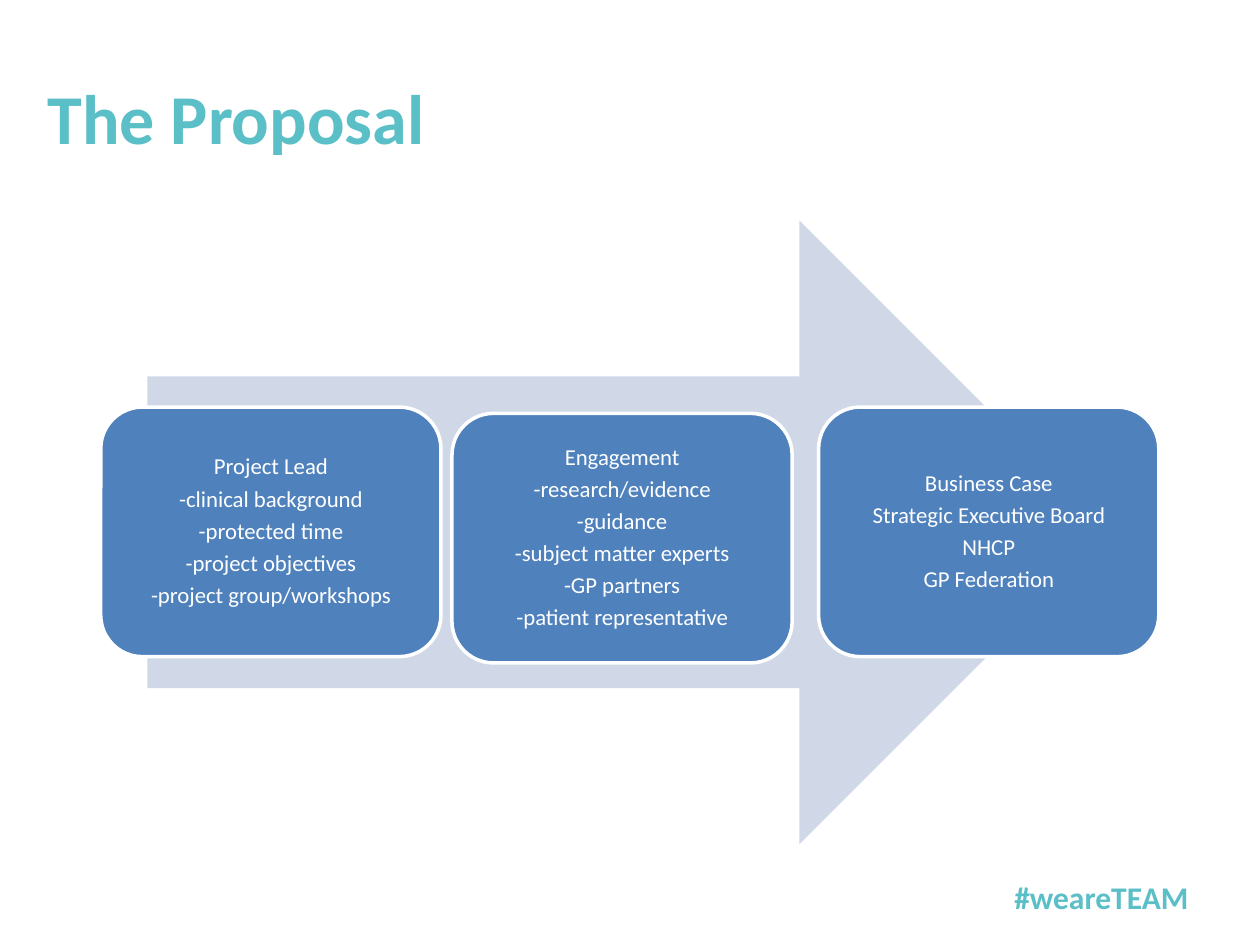
import pptx
import pptx.util
import pptx.dml.color
import pptx.enum.shapes
import pptx.enum.text

Pt = pptx.util.Pt
SHAPE = pptx.enum.shapes.MSO_SHAPE
ALIGN = pptx.enum.text.PP_ALIGN
MIDDLE = pptx.enum.text.MSO_ANCHOR.MIDDLE

COLORS = {"teal": "5BBFC7", "arrow": "D0D8E8", "card": "4F81BD", "white": "FFFFFF"}
FONT = "Calibri"
CARD_W, CARD_H = 194.4, 142.6

# Left, top and lines of each card
CARDS = [
    (57.6, 232.6, ["Project Lead", "-clinical background", "-protected time",
                   "-project objectives", "-project group/workshops"]),
    (258.3, 236.2, ["Engagement", "-research/evidence", "-guidance",
                    "-subject matter experts", "-GP partners",
                    "-patient representative"]),
    (467.8, 232.6, ["Business Case", "Strategic Executive Board", "NHCP",
                    "GP Federation"]),
]


def rgb(name):
    return pptx.dml.color.RGBColor.from_string(COLORS[name])


def set_font(p, size, color, bold=False):
    for r in p.runs:
        r.font.name = FONT
        r.font.size = Pt(size)
        r.font.bold = bold
        r.font.color.rgb = rgb(color)


def add_heading(s, text, left, top, width, height, size, align=ALIGN.LEFT):
    sp = s.shapes.add_textbox(Pt(left), Pt(top), Pt(width), Pt(height))
    tf = sp.text_frame
    tf.word_wrap = True
    tf.vertical_anchor = MIDDLE
    tf.text = text
    p = tf.paragraphs[0]
    p.alignment = align
    set_font(p, size, "teal", bold=True)


def add_filled_shape(s, kind, left, top, width, height, color):
    sp = s.shapes.add_shape(kind, Pt(left), Pt(top), Pt(width), Pt(height))
    sp.shadow.inherit = False
    sp.fill.solid()
    sp.fill.fore_color.rgb = rgb(color)
    sp.line.fill.background()
    return sp


def add_card(s, left, top, lines):
    sp = add_filled_shape(s, SHAPE.ROUNDED_RECTANGLE, left, top, CARD_W, CARD_H, "card")
    sp.line.color.rgb = rgb("white")
    sp.line.width = Pt(2)
    tf = sp.text_frame
    tf.word_wrap = True
    tf.vertical_anchor = MIDDLE
    tf.margin_left = tf.margin_right = tf.margin_top = tf.margin_bottom = Pt(3.6)
    tf.text = "\n".join(lines)
    for p in tf.paragraphs:
        p.alignment = ALIGN.CENTER
        p.line_spacing = 0.9
        p.space_after = Pt(4.3)
        set_font(p, 13, "white")


def main():
    prs = pptx.Presentation()
    prs.slide_width, prs.slide_height = Pt(720), Pt(540)
    s = prs.slides.add_slide(prs.slide_layouts[6])

    # Hashtag and title
    add_heading(s, "#weareTEAM", 518.4, 498.2, 167.8, 28.8, 18, ALIGN.RIGHT)
    add_heading(s, "The Proposal", 20.2, 21.6, 648, 90, 40)

    # Process arrow with the three stages on top
    add_filled_shape(s, SHAPE.RIGHT_ARROW, 84.2, 126, 550.8, 356.4, "arrow")
    for left, top, lines in CARDS:
        add_card(s, left, top, lines)

    prs.save("out.pptx")


if __name__ == "__main__":
    main()
